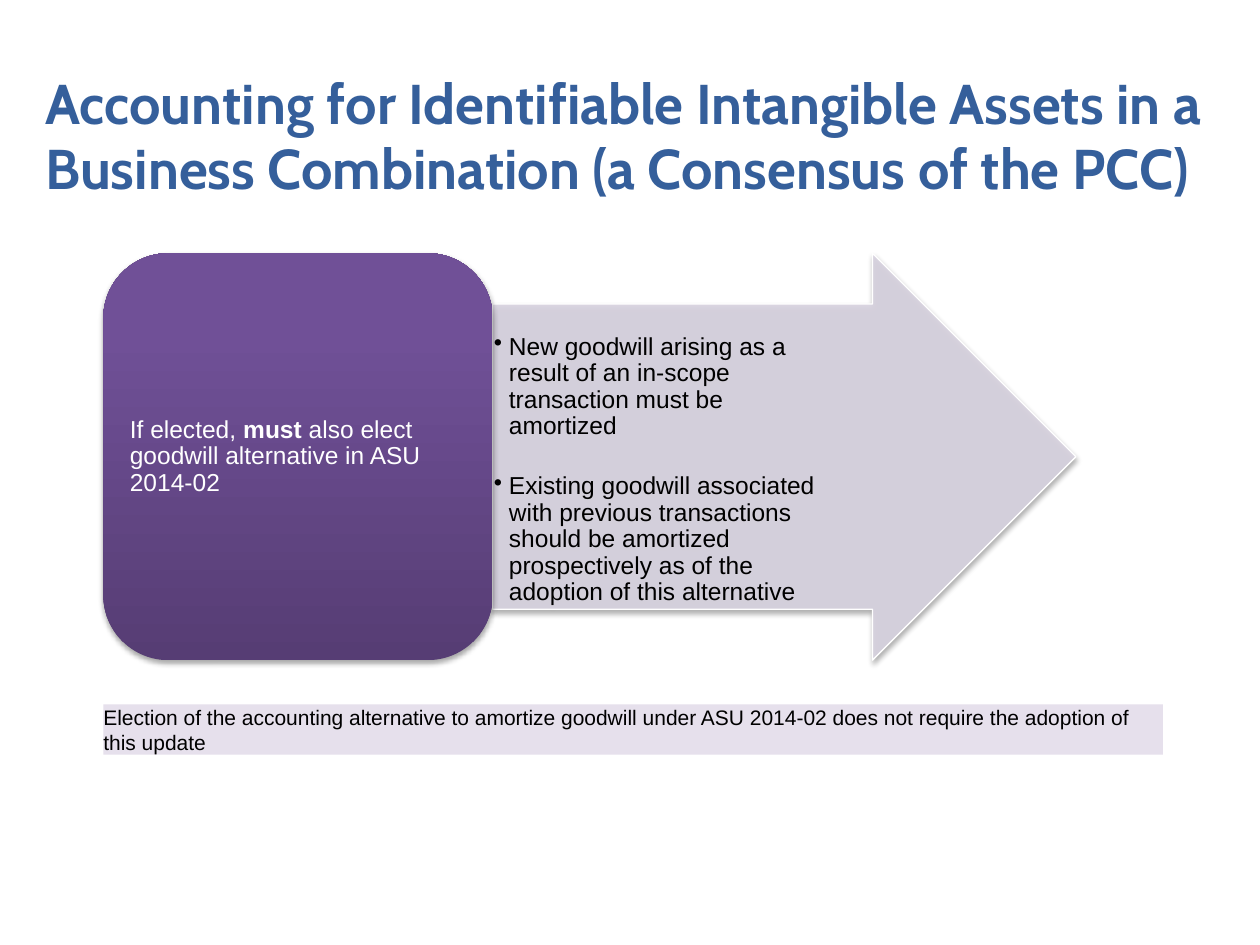
from lxml.etree import SubElement
from pptx import Presentation
from pptx.dml.color import RGBColor
from pptx.enum.shapes import MSO_SHAPE
from pptx.enum.text import MSO_ANCHOR, MSO_AUTO_SIZE, PP_ALIGN
from pptx.oxml.ns import qn
from pptx.util import Inches, Pt

TITLE = [[("Accounting for Identifiable Intangible Assets in a "
           "Business Combination (a Consensus of the PCC)", True)]]
CONDITION = [[("If elected, ", False), ("must", True),
              (" also elect goodwill alternative in ASU 2014-02", False)]]
CONSEQUENCES = [
    [("New goodwill arising as a result of an in-scope transaction must be amortized", False)],
    [("Existing goodwill associated with previous transactions should be "
      "amortized prospectively as of the adoption of this alternative", False)],
]
NOTE = [[("Election of the accounting alternative to amortize goodwill under "
          "ASU 2014-02 does not require the adoption of this update", False)]]

LEFT, TOP, HEIGHT = 0.82, 2.01, 3.23
BOX_WIDTH, ARROW_WIDTH = 3.09, 4.63


def color(value):
    return RGBColor.from_string(value)


def write_text(shape, paragraphs, size=14, font="Arial", fill="000000", spacing=1.0,
               gap=0, bullet=False, anchor=MSO_ANCHOR.MIDDLE, margins=(0, 0, 0, 0)):
    frame = shape.text_frame
    frame.word_wrap = True
    frame.auto_size = MSO_AUTO_SIZE.NONE
    frame.vertical_anchor = anchor
    (frame.margin_left, frame.margin_top,
     frame.margin_right, frame.margin_bottom) = map(Inches, margins)
    for index, runs in enumerate(paragraphs):
        paragraph = frame.add_paragraph() if index else frame.paragraphs[0]
        paragraph.alignment = PP_ALIGN.LEFT
        paragraph.line_spacing = spacing
        paragraph.space_before = Pt(gap if index else 0)
        if bullet:
            properties = paragraph._p.get_or_add_pPr()
            properties.set("marL", str(Inches(0.12)))
            properties.set("indent", str(-Inches(0.12)))
            SubElement(properties, qn("a:buChar"), char="•")
        for text, bold in runs:
            run = paragraph.add_run()
            run.text = text
            run.font.name = font
            run.font.size = Pt(size)
            run.font.bold = bold
            run.font.color.rgb = color(fill)


def add_block(slide, kind, left, top, width, height):
    shape = slide.shapes.add_shape(kind, *map(Inches, (left, top, width, height)))
    shape.shadow.inherit = False
    shape.line.fill.background()
    return shape


def add_shadow(shape):
    effects = shape.element.spPr.find(qn("a:effectLst"))
    shadow = SubElement(effects, qn("a:outerShdw"), blurRad=str(Pt(3.1)),
                        dist=str(Pt(1.8)), dir="5400000", rotWithShape="0")
    shade = SubElement(shadow, qn("a:srgbClr"), val="000000")
    SubElement(shade, qn("a:alpha"), val="35000")


def add_arrow(slide):
    arrow = add_block(slide, MSO_SHAPE.RIGHT_ARROW, LEFT + BOX_WIDTH, TOP, ARROW_WIDTH, HEIGHT)
    arrow.adjustments[0] = 0.75
    arrow.adjustments[1] = 0.5
    arrow.fill.solid()
    arrow.fill.fore_color.rgb = color("D8D3E0")
    solid = arrow.element.spPr.find(qn("a:solidFill"))
    SubElement(solid[0], qn("a:alpha"), val="90000")
    arrow.line.color.rgb = color("FFFFFF")
    arrow.line.width = Pt(0.75)
    add_shadow(arrow)
    write_text(arrow, CONSEQUENCES, spacing=0.9, gap=19, bullet=True,
               anchor=MSO_ANCHOR.TOP, margins=(0.01, 0.24, 0.82, 0.01))


def add_condition(slide):
    box = add_block(slide, MSO_SHAPE.ROUNDED_RECTANGLE, LEFT, TOP, BOX_WIDTH, HEIGHT)
    box.fill.gradient()
    box.fill.gradient_angle = 90
    for stop, (position, value) in zip(box.fill.gradient_stops,
                                       [(0, "563D74"), (0.8, "705097")]):
        stop.position = position
        stop.color.rgb = color(value)
    add_shadow(box)
    write_text(box, CONDITION, fill="FFFFFF", spacing=0.9,
               margins=(0.06, 0.03, 0.06, 0.03))


def add_note(slide):
    note = add_block(slide, MSO_SHAPE.RECTANGLE, LEFT, 5.59, 8.41, 0.4)
    note.fill.solid()
    note.fill.fore_color.rgb = color("E6E0EC")
    write_text(note, NOTE, size=12, anchor=MSO_ANCHOR.TOP)


def main():
    presentation = Presentation()
    presentation.slide_width, presentation.slide_height = Inches(10), Inches(7.5)
    slide = presentation.slides.add_slide(presentation.slide_layouts[5])
    title = slide.shapes.title
    title.left, title.top, title.width, title.height = map(Inches, (0.26, 0.59, 9.74, 0.98))
    write_text(title, TITLE, size=32, font="Cabin", fill="355F9B",
               spacing=Pt(37), margins=(0.1, 0.05, 0.1, 0.05))
    add_arrow(slide)
    add_condition(slide)
    add_note(slide)
    presentation.save("out.pptx")


if __name__ == "__main__":
    main()
